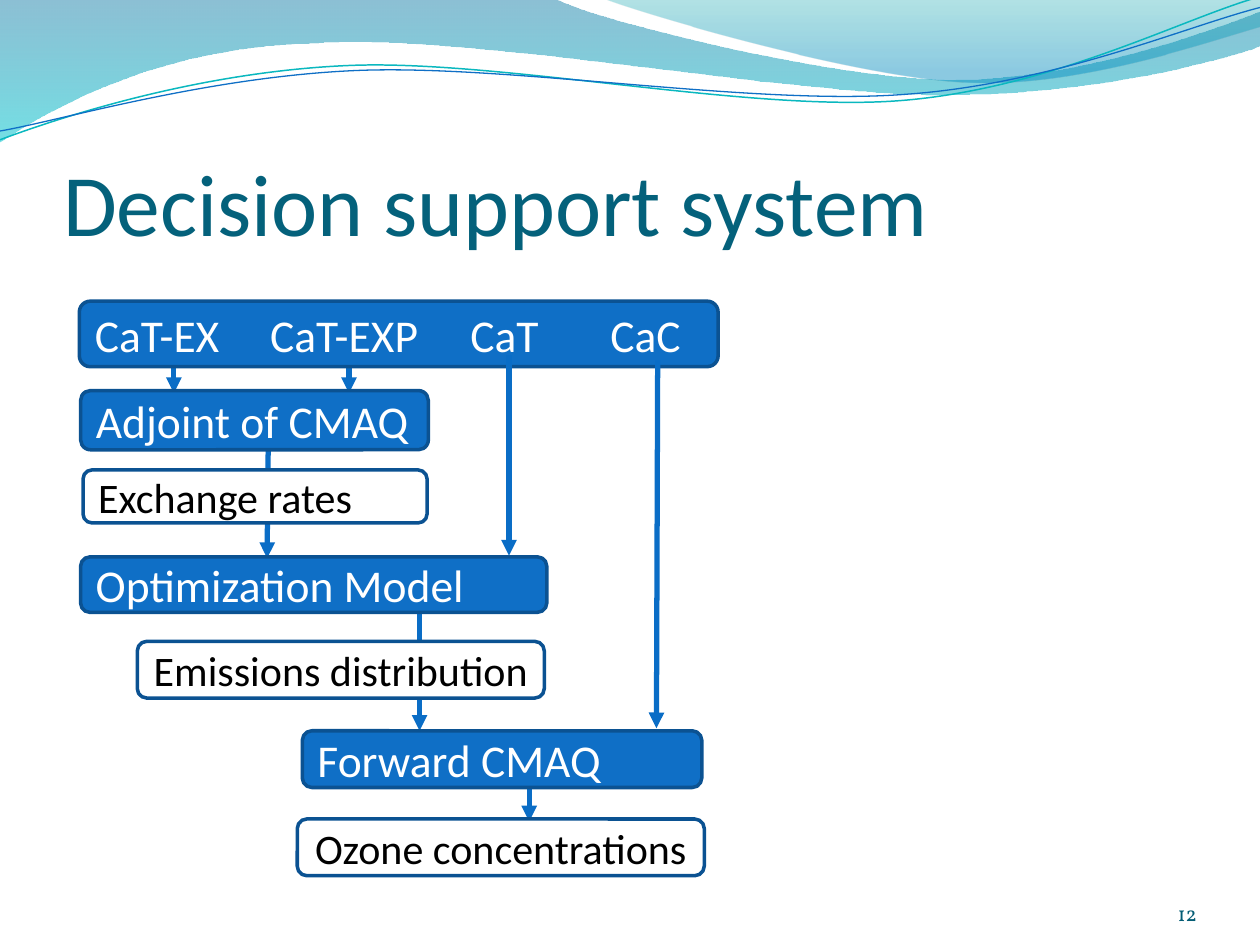
"""Build the decision support system flowchart slide."""
import math
from dataclasses import dataclass

import pptx
import pptx.dml.color
import pptx.enum.shapes
import pptx.enum.text
import pptx.oxml
import pptx.oxml.ns
import pptx.util

PX = 9144
STRAND_TILT = -2.7


@dataclass(frozen=True)
class Theme:
    font: str = "Calibri"
    number_font: str = "Vollkorn"
    title: str = "04617B"
    number: str = "045D75"
    blue: str = "0F6FC6"
    white: str = "FFFFFF"
    black: str = "000000"
    border: str = "0B5292"
    arrow: str = "0A6DC6"
    teal: str = "0AB8BF"
    title_pt: int = 50
    model_pt: int = 26
    result_pt: int = 24
    number_pt: int = 12
    arrow_pt: int = 3
    border_pt: int = 2


T = Theme()
ALIGN = pptx.enum.text.PP_ALIGN
ANCHOR = pptx.enum.text.MSO_ANCHOR
qn = pptx.oxml.ns.qn

TITLE = ("Decision support system", (50, 77, 900, 125))
NUMBER = ("12", (867, 695, 83, 40))

WAVES = [
    ([(0, 0), (440, -1),
      (476, 17, 664, 63, 758, 63), (853, 63, 958, 26, 1000, 9),
      (1001, 36),
      (983, 44, 870, 76, 746, 75), (622, 75, 382, 28, 257, 34),
      (129, 36, 46, 83, -1, 113)],
     [(0, "0074A1", 45), (1, "00C6CF", 55)]),
    ([(479, -1), (509, 11, 682, 62, 769, 65), (856, 69, 961, 32, 1000, 21),
      (1000, 0)],
     [(0, "00A1A9", 30), (0.8, "008BBF", 45)]),
]
STRANDS = [
    ([(0, 111), (48, 93, 158, 57, 277, 52), (395, 47, 593, 89, 713, 80),
      (833, 71, 938, 15, 998, -2)], T.teal, 0.85),
    ([(0, 104), (47, 96, 164, 61, 283, 56), (403, 51, 597, 84, 717, 75),
      (836, 67, 941, 21, 1000, 6)], T.blue, 0.75),
]

ARROWS_BEHIND = [(138, 277, 138, 312), (277, 277, 277, 312), (420, 617, 420, 652),
                 (333, 479, 333, 580), (213, 342, 212, 443)]
ARROWS_FRONT = [(522, 286, 521, 578), (404, 282, 404, 441)]
HEADER_TABS = (139, 298, 409)
MODELS = [
    ("CaT-EX\tCaT-EXP\tCaT\tCaC", (63, 239, 507, 52), ALIGN.LEFT),
    ("Adjoint of CMAQ", (64, 310, 276, 47), ALIGN.LEFT),
    ("Optimization Model", (64, 442, 370, 44), ALIGN.LEFT),
    ("Forward CMAQ", (240, 580, 317, 45), ALIGN.LEFT),
]
RESULTS = [
    ("Exchange rates", (66, 373, 273, 42), ALIGN.LEFT),
    ("Emissions distribution", (109, 509, 323, 45), ALIGN.CENTER),
    ("Ozone concentrations", (236, 650, 323, 45), ALIGN.CENTER),
]


def rgb(color):
    return pptx.dml.color.RGBColor.from_string(color)


def emu(lengths):
    return [v * PX for v in lengths]


def add_xml(parent, tag, **attrs):
    el = pptx.oxml.parse_xml(f"<a:{tag} {pptx.oxml.ns.nsdecls('a')}/>")
    for name, value in attrs.items():
        el.set(name, str(value))
    parent.append(el)
    return el


def set_text(tf, text, font, size, color, align, anchor):
    tf.word_wrap = True
    tf.auto_size = pptx.enum.text.MSO_AUTO_SIZE.NONE
    tf.vertical_anchor = anchor
    p = tf.paragraphs[0]
    p.text = text
    p.alignment = align
    for r in p.runs:
        r.font.name = font
        r.font.size = pptx.util.Pt(size)
        r.font.color.rgb = rgb(color)


def set_insets(tf, top=0):
    tf.margin_left = tf.margin_right = tf.margin_bottom = 0
    tf.margin_top = top * PX


def rotate(x, y, degrees):
    a = math.radians(degrees)
    return x * math.cos(a) - y * math.sin(a), x * math.sin(a) + y * math.cos(a)


def add_curve(s, segments, close, tilt=0):
    points = [rotate(*seg[i:i + 2], -tilt) for seg in segments for i in range(0, len(seg), 2)]
    points = [(round(x * PX), round(y * PX)) for x, y in points]
    builder = s.shapes.build_freeform(*points[0])
    builder.add_line_segments(points[1:], close=close)
    sp = builder.convert_to_shape()
    sp.shadow.inherit = False
    lines = iter(list(sp.element.iter(qn("a:lnTo"))))
    for seg in segments[1:]:
        first = next(lines)
        if len(seg) == 6:
            bezier = add_xml(first.getparent(), "cubicBezTo")
            first.addprevious(bezier)
            for line in (first, next(lines), next(lines)):
                bezier.append(line[0])
                line.getparent().remove(line)
    if tilt:
        x, y = rotate(sp.left + sp.width / 2, sp.top + sp.height / 2, tilt)
        sp.left, sp.top = round(x - sp.width / 2), round(y - sp.height / 2)
        sp.rotation = tilt
    return sp


def add_wave(s, segments, stops):
    sp = add_curve(s, segments, True)
    sp.line.fill.background()
    sp.fill.gradient()
    sp.fill.gradient_angle = 270
    for stop, (position, color, _) in zip(sp.fill.gradient_stops, stops):
        stop.position = position
        stop.color.rgb = rgb(color)
    colors = list(sp.element.spPr.iter(qn("a:srgbClr")))
    for el, (_, _, opacity) in zip(colors, stops):
        add_xml(el, "alpha", val=opacity * 1000)


def add_strand(s, segments, color, width):
    sp = add_curve(s, segments, False, STRAND_TILT)
    sp.fill.background()
    sp.line.color.rgb = rgb(color)
    sp.line.width = pptx.util.Pt(width)


def add_arrow(s, ends):
    arrow = s.shapes.add_connector(pptx.enum.shapes.MSO_CONNECTOR.STRAIGHT, *emu(ends))
    arrow.line.color.rgb = rgb(T.arrow)
    arrow.line.width = pptx.util.Pt(T.arrow_pt)
    add_xml(arrow.element.spPr.find(qn("a:ln")), "tailEnd", type="triangle")
    add_xml(arrow.element.spPr, "effectLst")


def add_box(s, text, box, align, fill, color, size):
    sp = s.shapes.add_shape(pptx.enum.shapes.MSO_SHAPE.ROUNDED_RECTANGLE, *emu(box))
    sp.shadow.inherit = False
    sp.fill.solid()
    sp.fill.fore_color.rgb = rgb(fill)
    sp.line.color.rgb = rgb(T.border)
    sp.line.width = pptx.util.Pt(T.border_pt)
    set_text(sp.text_frame, text, T.font, size, color, align, ANCHOR.MIDDLE)
    if "\t" in text:
        tab_list = add_xml(next(sp.element.iter(qn("a:pPr"))), "tabLst")
        for x in HEADER_TABS:
            add_xml(tab_list, "tab", pos=x * PX, algn="l")


def main():
    prs = pptx.Presentation()
    prs.slide_width, prs.slide_height = emu((1000, 750))
    s = prs.slides.add_slide(prs.slide_layouts[5])
    for wave in WAVES:
        add_wave(s, *wave)
    for strand in STRANDS:
        add_strand(s, *strand)

    text, box = TITLE
    title = s.shapes.title
    title.left, title.top, title.width, title.height = emu(box)
    set_text(title.text_frame, text, T.font, T.title_pt, T.title, ALIGN.LEFT, ANCHOR.BOTTOM)
    set_insets(title.text_frame, 5)

    text, box = NUMBER
    tf = s.shapes.add_textbox(*emu(box)).text_frame
    set_text(tf, text, T.number_font, T.number_pt, T.number, ALIGN.RIGHT, ANCHOR.BOTTOM)
    set_insets(tf)

    for ends in ARROWS_BEHIND:
        add_arrow(s, ends)
    for model in MODELS:
        add_box(s, *model, T.blue, T.white, T.model_pt)
    for result in RESULTS:
        add_box(s, *result, T.white, T.black, T.result_pt)
    for ends in ARROWS_FRONT:
        add_arrow(s, ends)
    prs.save("out.pptx")


if __name__ == "__main__":
    main()
